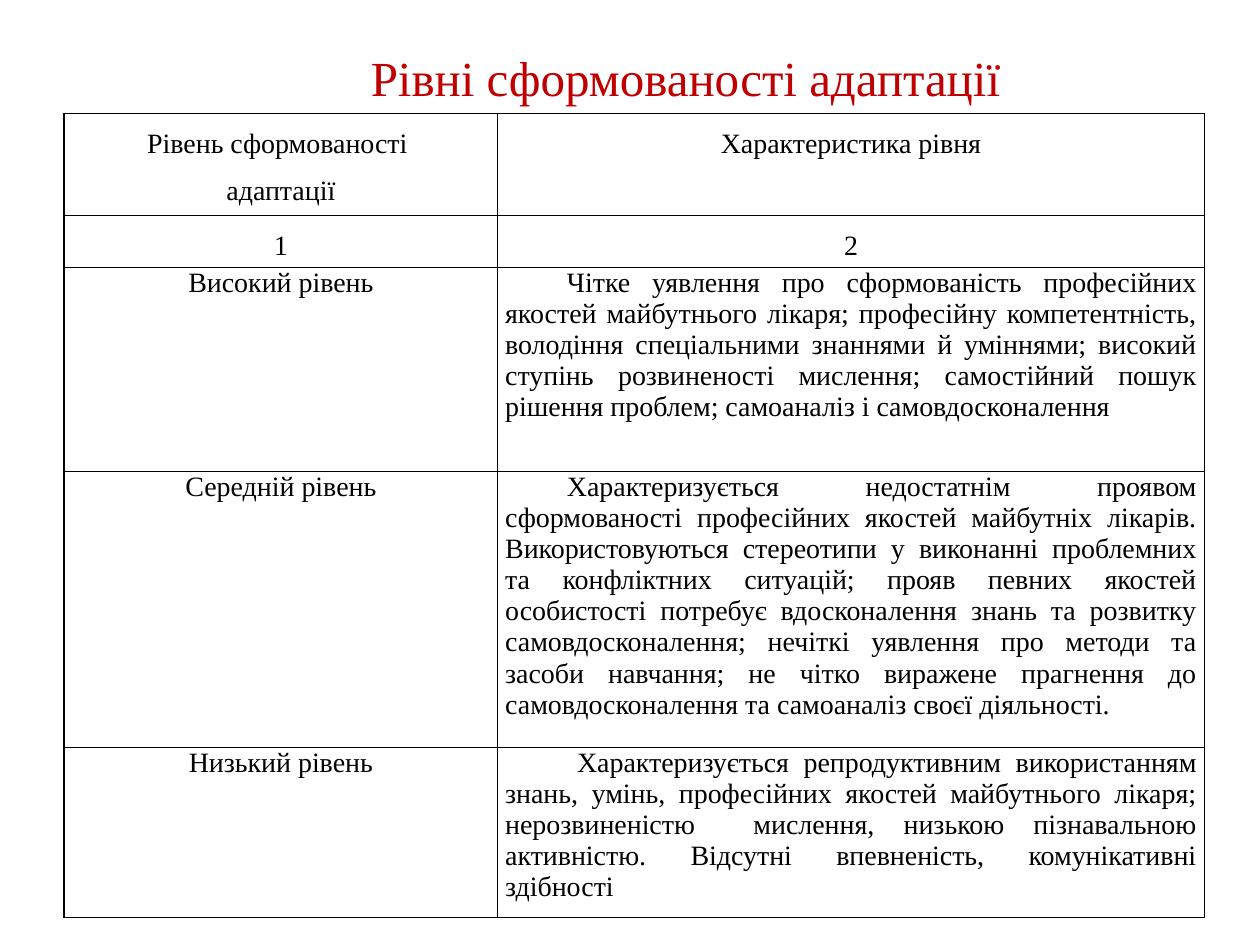
import lxml.etree
import pptx
import pptx.dml.color
import pptx.enum.text
import pptx.oxml.ns
import pptx.util

RED = pptx.dml.color.RGBColor(0xC0, 0x00, 0x00)
BLACK = pptx.dml.color.RGBColor(0x00, 0x00, 0x00)
FONT = "Times New Roman"
ALIGN = pptx.enum.text.PP_ALIGN
WIDTH, HEIGHT = pptx.util.Inches(10), pptx.util.Inches(7.5)
COLUMN_SHARES = (0.344, 0.561)
ROW_SHARES = (0.108, 0.055, 0.216, 0.292, 0.18)
HEADINGS = (
    (("Рівень сформованості ", "адаптації"), ("Характеристика рівня",)),
    (("1",), ("2",)),
)
LEVELS = (
    ("Високий рівень", 0.49,
     "Чітке уявлення про сформованість професійних якостей майбутнього лікаря; "
     "професійну компетентність, володіння спеціальними знаннями й уміннями; "
     "високий ступінь розвиненості мислення; самостійний пошук рішення проблем; "
     "самоаналіз і самовдосконалення "),
    ("Середній рівень", 0.49,
     "Характеризується недостатнім проявом сформованості професійних якостей "
     "майбутніх лікарів. Використовуються стереотипи у виконанні проблемних та "
     "конфліктних ситуацій; прояв певних якостей особистості потребує "
     "вдосконалення знань та розвитку самовдосконалення; нечіткі уявлення про "
     "методи та засоби навчання; не чітко виражене прагнення до "
     "самовдосконалення та самоаналіз своєї діяльності."),
    ("Низький рівень", 0.57,
     "Характеризується репродуктивним використанням знань, умінь, професійних "
     "якостей майбутнього лікаря; нерозвиненістю  мислення, низькою "
     "пізнавальною активністю. Відсутні впевненість, комунікативні здібності"),
)


def write(frame, lines, size, color, align=ALIGN.CENTER, spacing=None, indent=0):
    """Fill a text frame with one paragraph per line."""
    frame.text = "\n".join(lines)
    frame.word_wrap = True
    for paragraph in frame.paragraphs:
        paragraph.alignment = align
        paragraph.line_spacing = spacing
        paragraph.font.name = FONT
        paragraph.font.size = pptx.util.Pt(size)
        paragraph.font.color.rgb = color
        if indent:
            properties = paragraph._p.get_or_add_pPr()
            properties.set("marL", "0")
            properties.set("indent", str(pptx.util.Inches(indent)))


def add_border(cell):
    """Draw a thin black line on each side of a cell."""
    qn = pptx.oxml.ns.qn
    properties = cell._tc.get_or_add_tcPr()
    for side in ("a:lnL", "a:lnR", "a:lnT", "a:lnB"):
        line = lxml.etree.SubElement(properties, qn(side), w=str(pptx.util.Pt(1)))
        fill = lxml.etree.SubElement(line, qn("a:solidFill"))
        lxml.etree.SubElement(fill, qn("a:srgbClr"), val=str(BLACK))


def fill_cell(cell, lines, **layout):
    """Write a bordered cell without a background."""
    cell.margin_left = cell.margin_right = pptx.util.Inches(0.06)
    cell.margin_top = cell.margin_bottom = 0
    add_border(cell)
    cell.fill.background()
    write(cell.text_frame, lines, 16, BLACK, **layout)


def add_title(slide, text):
    """Add the red heading above the table."""
    title = slide.shapes.add_textbox(
        int(0.114 * WIDTH), int(0.043 * HEIGHT), int(0.811 * WIDTH), int(0.076 * HEIGHT))
    title.text_frame.vertical_anchor = pptx.enum.text.MSO_ANCHOR.MIDDLE
    write(title.text_frame, [text], 28, RED, indent=0.49)


def add_levels_table(slide):
    """Add the table of adaptation levels and their descriptions."""
    table = slide.shapes.add_table(
        len(ROW_SHARES), len(COLUMN_SHARES), int(0.051 * WIDTH), int(0.12 * HEIGHT),
        int(sum(COLUMN_SHARES) * WIDTH), int(sum(ROW_SHARES) * HEIGHT)).table
    table.first_row = table.horz_banding = False
    for column, share in zip(table.columns, COLUMN_SHARES):
        column.width = int(share * WIDTH)
    for row, share in zip(table.rows, ROW_SHARES):
        row.height = int(share * HEIGHT)
    for row, headings in enumerate(HEADINGS):
        for column, lines in enumerate(headings):
            fill_cell(table.cell(row, column), lines, spacing=1.5)
    for row, (level, indent, description) in enumerate(LEVELS, len(HEADINGS)):
        fill_cell(table.cell(row, 0), [level])
        fill_cell(table.cell(row, 1), [description], align=ALIGN.JUSTIFY, indent=indent)


def main():
    """Build and save the slide."""
    presentation = pptx.Presentation()
    presentation.slide_width, presentation.slide_height = WIDTH, HEIGHT
    slide = presentation.slides.add_slide(presentation.slide_layouts[6])
    add_levels_table(slide)
    add_title(slide, "Рівні сформованості адаптації")
    presentation.save("out.pptx")


if __name__ == "__main__":
    main()
